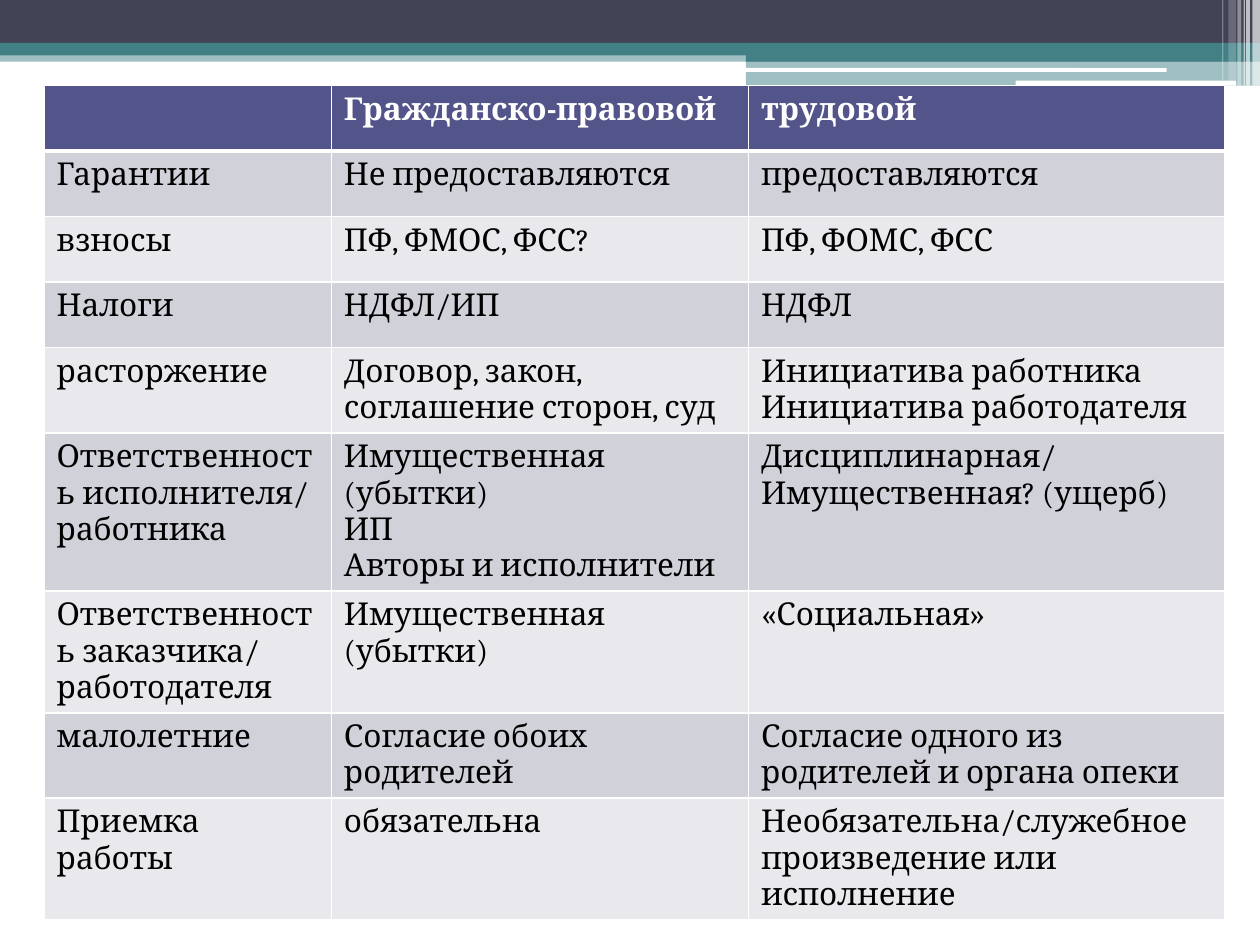
from lxml.etree import SubElement
from pptx import Presentation
from pptx.dml.color import RGBColor
from pptx.enum.shapes import MSO_SHAPE as Shape
from pptx.oxml.ns import qn
from pptx.util import Inches, Pt

WHITE = RGBColor(0xFF, 0xFF, 0xFF)
BLACK = RGBColor(0x00, 0x00, 0x00)
SLATE = RGBColor(0x42, 0x44, 0x56)
TEAL = RGBColor(0x43, 0x80, 0x86)
INDIGO = RGBColor(0x53, 0x54, 0x8A)
BANDS = (RGBColor(0xD1, 0xD1, 0xDA), RGBColor(0xE9, 0xE9, 0xED))

# left, top, width, height, colour, opacity in percent
BARS = [
    (0, 0.4, 10, 0.09, TEAL, 50),
    (0, 0, 10, 0.34, SLATE, 100),
    (0, 0.34, 10, 0.1, TEAL, 100),
    (5.92, 0.39, 4.08, 0.1, TEAL, 100),
    (5.92, 0.48, 4.08, 0.2, TEAL, 50),
]
ROUNDED_LINES = [(5.91, 0.54, 3.35, 0.03), (8.06, 0.64, 1.75, 0.04)]
# left, width, height, opacity in percent
STRIPES = [
    (9.94, 0.06, 0.68, 65),
    (9.89, 0.03, 0.68, 65),
    (9.87, 0.01, 0.68, 60),
    (9.82, 0.03, 0.68, 40),
    (9.75, 0.06, 0.64, 20),
    (9.7, 0.01, 0.64, 30),
]

COLUMN_WIDTHS = (2.28, 3.31, 3.78)
ROW_HEIGHT = 0.52
CONTRACT_ROWS = [
    ("", "Гражданско-правовой", "трудовой"),
    ("Гарантии", "Не предоставляются", "предоставляются"),
    ("взносы", "ПФ, ФМОС, ФСС?", "ПФ, ФОМС, ФСС"),
    ("Налоги", "НДФЛ/ИП", "НДФЛ"),
    ("расторжение", "Договор, закон, соглашение сторон, суд",
     "Инициатива работника\nИнициатива работодателя"),
    ("Ответственность исполнителя/\nработника",
     "Имущественная (убытки)\nИП\nАвторы и исполнители",
     "Дисциплинарная/\nИмущественная? (ущерб)"),
    ("Ответственность заказчика/\nработодателя", "Имущественная (убытки)",
     "«Социальная»"),
    ("малолетние", "Согласие обоих родителей",
     "Согласие одного из родителей и органа опеки"),
    ("Приемка работы", "обязательна",
     "Необязательна/служебное произведение или исполнение"),
]


class SlideBuilder:
    font_name = "Cambria"
    font_size = Pt(18)

    def __init__(self, slide):
        self.slide = slide

    def bar(self, left, top, width, height, color, opacity=100, kind=Shape.RECTANGLE):
        shape = self.slide.shapes.add_shape(
            kind, Inches(left), Inches(top), Inches(width), Inches(height))
        shape.shadow.inherit = False
        shape.line.fill.background()
        shape.fill.solid()
        shape.fill.fore_color.rgb = color
        if opacity < 100:
            color_element = shape.fill._xPr.find(qn("a:solidFill"))[0]
            SubElement(color_element, qn("a:alpha"), val=str(opacity * 1000))
        return shape

    def borders(self, cell, top=1, bottom=1):
        properties = cell._tc.get_or_add_tcPr()
        widths = {"lnL": 1, "lnR": 1, "lnT": top, "lnB": bottom}
        for position, (side, width) in enumerate(widths.items()):
            line = SubElement(properties, qn(f"a:{side}"), w=str(Pt(width)))
            fill = SubElement(line, qn("a:solidFill"))
            SubElement(fill, qn("a:srgbClr"), val=str(WHITE))
            properties.insert(position, line)

    def cell(self, cell, text, fill, color, bold):
        cell.text = text
        cell.fill.solid()
        cell.fill.fore_color.rgb = fill
        for paragraph in cell.text_frame.paragraphs:
            font = paragraph.font
            font.name, font.size = self.font_name, self.font_size
            font.bold, font.color.rgb = bold, color

    def table(self, left, top, rows, widths, row_height):
        table = self.slide.shapes.add_table(
            len(rows), len(widths), Inches(left), Inches(top),
            Inches(sum(widths)), Inches(row_height * len(rows))).table
        for column, width in zip(table.columns, widths):
            column.width = Inches(width)
        for index, texts in enumerate(rows):
            table.rows[index].height = Inches(row_height)
            header = index == 0
            fill = INDIGO if header else BANDS[(index - 1) % 2]
            for cell, text in zip(table.rows[index].cells, texts):
                self.cell(cell, text, fill, WHITE if header else BLACK, header)
                self.borders(cell, top=3 if index == 1 else 1,
                             bottom=3 if header else 1)


def main():
    presentation = Presentation()
    presentation.slide_width, presentation.slide_height = Inches(10), Inches(7.5)
    builder = SlideBuilder(presentation.slides.add_slide(presentation.slide_layouts[6]))

    # Header band
    for bar in BARS:
        builder.bar(*bar)
    for line in ROUNDED_LINES:
        builder.bar(*line, WHITE, kind=Shape.ROUNDED_RECTANGLE)
    for left, width, height, opacity in STRIPES:
        builder.bar(left, 0, width, height, WHITE, opacity)

    # Comparison of contracts
    builder.table(0.35, 0.68, CONTRACT_ROWS, COLUMN_WIDTHS, ROW_HEIGHT)

    presentation.save("out.pptx")


if __name__ == "__main__":
    main()
